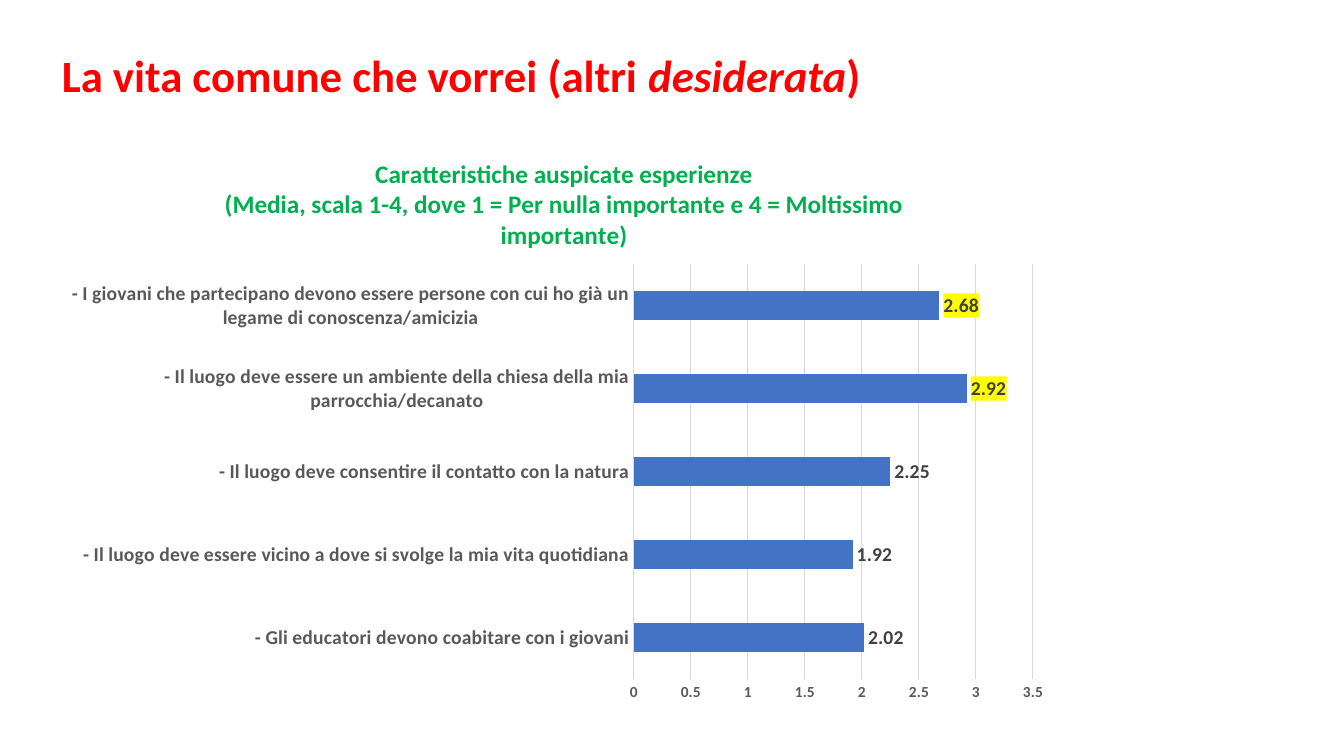
from typing import NamedTuple

from lxml import etree
from pptx import Presentation
from pptx.chart.chart import Chart
from pptx.chart.data import CategoryChartData
from pptx.dml.color import RGBColor
from pptx.enum.chart import XL_CHART_TYPE, XL_LABEL_POSITION, XL_TICK_MARK
from pptx.enum.text import MSO_AUTO_SIZE
from pptx.oxml import parse_xml
from pptx.oxml.ns import nsdecls, qn
from pptx.slide import Slide
from pptx.text.text import Font
from pptx.util import Emu, Pt

BAR_CLUSTERED = XL_CHART_TYPE.BAR_CLUSTERED
OUTSIDE_END = XL_LABEL_POSITION.OUTSIDE_END
NO_TICK = XL_TICK_MARK.NONE
GROW = MSO_AUTO_SIZE.SHAPE_TO_FIT_TEXT

RED = RGBColor(0xFF, 0x00, 0x00)
GREEN = RGBColor(0x00, 0xB0, 0x50)
BLUE = RGBColor(0x44, 0x72, 0xC4)
YELLOW = RGBColor(0xFF, 0xFF, 0x00)
DARK = RGBColor(0x40, 0x40, 0x40)
GREY = RGBColor(0x59, 0x59, 0x59)
LIGHT = RGBColor(0xD9, 0xD9, 0xD9)
BLACK = RGBColor(0x00, 0x00, 0x00)
FONT = "Calibri"
EMU_PER_PX = 914400 / 100.8


class Wish(NamedTuple):
    label: str
    mean: float
    highlighted: bool = False


class TitleRun(NamedTuple):
    text: str
    italic: bool = False


WISHES = [
    Wish("- Gli educatori devono coabitare con i giovani", 2.02),
    Wish("- Il luogo deve essere vicino a dove si svolge la mia vita quotidiana", 1.92),
    Wish("- Il luogo deve consentire il contatto con la natura", 2.25),
    Wish("- Il luogo deve essere un ambiente della chiesa della mia parrocchia/decanato", 2.92, True),
    Wish("- I giovani che partecipano devono essere persone con cui ho già un legame di conoscenza/amicizia", 2.68, True),
]
TITLE_RUNS = [
    TitleRun("La vita comune che vorrei (altri "),
    TitleRun("desiderata", True),
    TitleRun(")"),
]
CHART_TITLE = [
    "Caratteristiche auspicate esperienze",
    "(Media, scala 1-4, dove 1 = Per nulla importante e 4 = Moltissimo importante)",
]


def px(n: int) -> Emu:
    return Emu(round(n * EMU_PER_PX))


def style(font: Font, size: int, color: RGBColor) -> None:
    font.name = FONT
    font.size = Pt(size)
    font.bold = True
    font.color.rgb = color


def add_title(slide: Slide) -> None:
    sp = slide.shapes.add_textbox(px(52), px(43), px(1135), px(65))
    tf = sp.text_frame
    tf.word_wrap = True
    tf.auto_size = GROW
    p = tf.paragraphs[0]
    style(p.font, 32, RED)
    for part in TITLE_RUNS:
        r = p.add_run()
        r.text = part.text
        r.font.italic = part.italic


def set_chart_title(chart: Chart) -> None:
    tf = chart.chart_title.text_frame
    for i, line in enumerate(CHART_TITLE):
        p = tf.paragraphs[0] if i == 0 else tf.add_paragraph()
        style(p.font, 18, GREEN)
        p.add_run().text = line
    chart.chart_title.include_in_layout = False


def style_axes(chart: Chart) -> None:
    for axis, size in ((chart.category_axis, 14), (chart.value_axis, 11)):
        axis.major_tick_mark = NO_TICK
        axis.minor_tick_mark = NO_TICK
        style(axis.tick_labels.font, size, GREY)
    value_axis = chart.value_axis
    value_axis.minimum_scale = 0
    value_axis.maximum_scale = 3.5
    value_axis.major_unit = 0.5
    value_axis.format.line.fill.background()
    for line in (chart.category_axis.format.line, value_axis.major_gridlines.format.line):
        line.color.rgb = LIGHT
        line.width = Pt(0.75)


def style_bars(chart: Chart) -> None:
    plot = chart.plots[0]
    plot.gap_width = 182
    plot.vary_by_categories = False
    series = plot.series[0]
    series.format.fill.solid()
    series.format.fill.fore_color.rgb = BLUE
    labels = series.data_labels
    labels.show_value = True
    labels.position = OUTSIDE_END
    style(labels.font, 14, DARK)
    for i, wish in enumerate(WISHES):
        if wish.highlighted:
            label = series.points[i].data_label
            style(label.font, 14, DARK)
            label.position = OUTSIDE_END
    for text in chart.element.findall(f".//{qn('c:dLbl')}/{qn('c:txPr')}"):
        text.addprevious(parse_xml(
            f'<c:spPr {nsdecls("c", "a")}><a:solidFill>'
            f'<a:srgbClr val="{YELLOW}"/></a:solidFill></c:spPr>'
        ))


def place_plot(chart: Chart) -> None:
    area = chart.element.find(f".//{qn('c:plotArea')}")
    for old in area.findall(qn("c:layout")):
        area.remove(old)
    layout = etree.Element(qn("c:layout"))
    manual = etree.SubElement(layout, qn("c:manualLayout"))
    settings = {
        "layoutTarget": "inner", "xMode": "edge", "yMode": "edge",
        "x": "0.57", "y": "0.22", "w": "0.4", "h": "0.72",
    }
    for tag, value in settings.items():
        etree.SubElement(manual, qn(f"c:{tag}")).set("val", value)
    area.insert(0, layout)


def add_wish_chart(slide: Slide) -> None:
    data = CategoryChartData()
    data.categories = [wish.label for wish in WISHES]
    data.add_series("Series 1", [wish.mean for wish in WISHES])
    frame = slide.shapes.add_chart(BAR_CLUSTERED, px(65), px(137), px(998), px(577), data)
    chart = frame.chart
    style(chart.font, 10, BLACK)
    chart.has_legend = False
    set_chart_title(chart)
    style_axes(chart)
    style_bars(chart)
    place_plot(chart)


def main() -> None:
    prs = Presentation()
    prs.slide_width = px(1344)
    prs.slide_height = px(756)
    slide = prs.slides.add_slide(prs.slide_layouts[6])
    add_wish_chart(slide)
    add_title(slide)
    prs.save("out.pptx")


if __name__ == "__main__":
    main()
